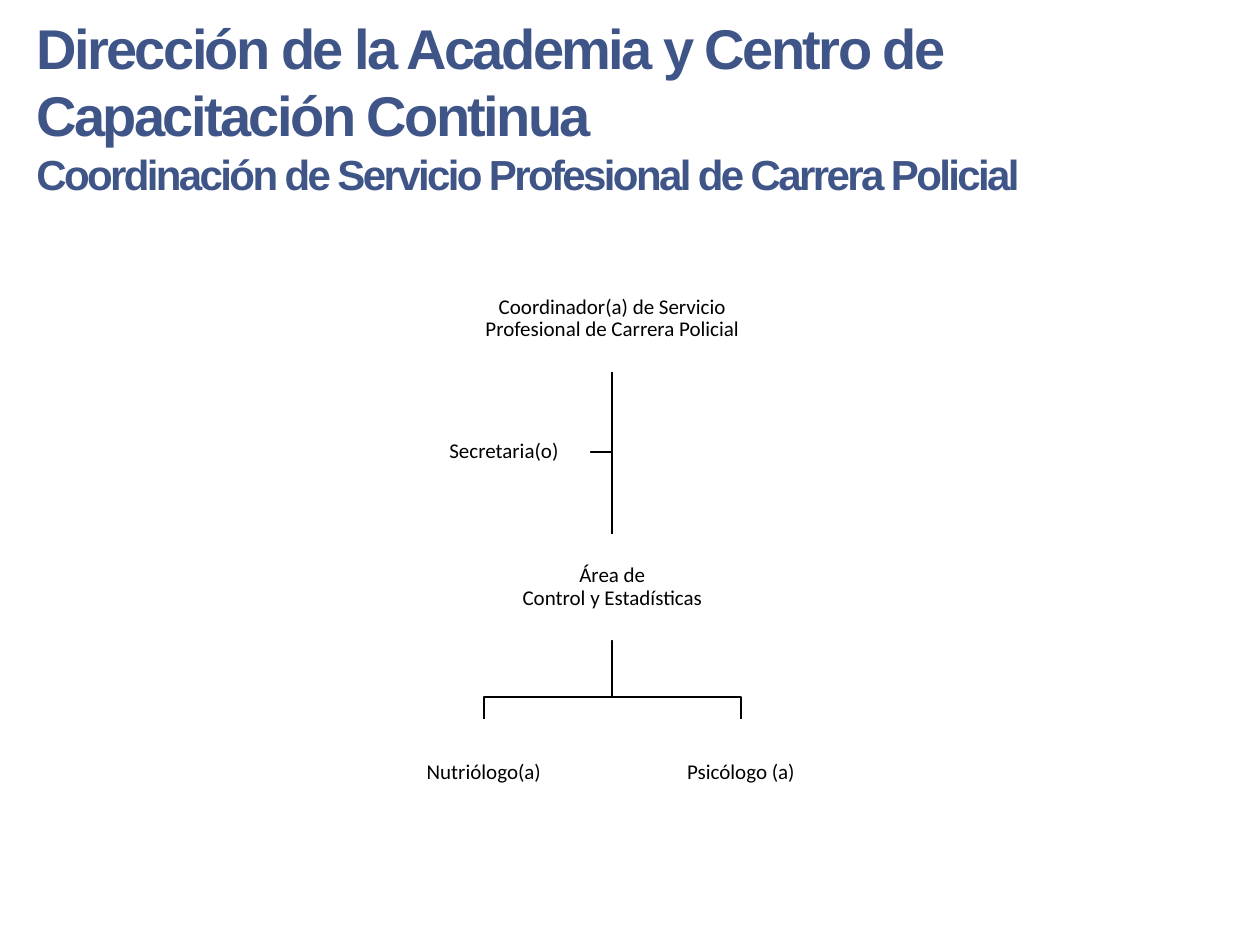
from dataclasses import dataclass

from lxml import etree
from pptx import Presentation
from pptx import util as u
from pptx.dml.color import RGBColor
from pptx.enum import shapes, text
from pptx.oxml import ns

TITLE_COLOUR = "3F5588"
BLACK = "000000"
WHITE = "FFFFFF"
BOX_HEIGHT = 0.84
CENTRE = 4.86
BRANCH_OFFSET = 1.02
BRANCH_Y = 5.53


@dataclass
class Position:
    label: str
    centre: float
    top: float
    width: float = 1.69
    height: float = BOX_HEIGHT

    @property
    def right(self) -> float:
        return self.centre + self.width / 2

    @property
    def middle(self) -> float:
        return self.top + self.height / 2

    @property
    def bottom(self) -> float:
        return self.top + self.height


def colour(value: str) -> RGBColor:
    return RGBColor.from_string(value)


def style_line(line) -> None:
    line.color.rgb = colour(BLACK)
    line.width = u.Pt(1)


def add_title(slide, lines: list[tuple[str, int]]) -> None:
    shape = slide.shapes.add_textbox(
        u.Inches(0.19), u.Inches(0.06), u.Inches(8.05), u.Inches(1.58))
    frame = shape.text_frame
    frame.word_wrap = True
    frame.text = "\n".join(line for line, _ in lines)
    for paragraph, (_, size) in zip(frame.paragraphs, lines):
        for run in paragraph.runs:
            run.font.name = "Arial"
            run.font.size = u.Pt(size)
            run.font.bold = True
            run.font.color.rgb = colour(TITLE_COLOUR)
            run.font._element.set("spc", "-150")


def add_position(slide, position: Position):
    shape = slide.shapes.add_shape(
        shapes.MSO_SHAPE.RECTANGLE,
        u.Inches(position.centre - position.width / 2), u.Inches(position.top),
        u.Inches(position.width), u.Inches(position.height))
    shape.shadow.inherit = False
    shape.fill.solid()
    shape.fill.fore_color.rgb = colour(WHITE)
    shape.line.fill.background()

    frame = shape.text_frame
    frame.word_wrap = True
    frame.vertical_anchor = text.MSO_ANCHOR.MIDDLE
    frame.margin_left = frame.margin_right = u.Inches(0.01)
    frame.margin_top = frame.margin_bottom = u.Inches(0.01)
    frame.text = position.label
    for paragraph in frame.paragraphs:
        paragraph.alignment = text.PP_ALIGN.CENTER
        paragraph.line_spacing = 0.9
        for run in paragraph.runs:
            run.font.name = "Calibri"
            run.font.size = u.Pt(12)
            run.font.color.rgb = colour(BLACK)
    return shape


def add_trunk(slide, upper, lower) -> None:
    """Join the bottom of one box to the top of the next."""
    connector = slide.shapes.add_connector(shapes.MSO_CONNECTOR.STRAIGHT, 0, 0, 0, 0)
    connector.begin_connect(upper, 2)
    connector.end_connect(lower, 0)
    style_line(connector.line)
    etree.SubElement(connector._element.spPr, ns.qn("a:effectLst"))


def add_elbow(slide, points: list[tuple[float, float]]) -> None:
    start, *others = [(u.Inches(x), u.Inches(y)) for x, y in points]
    builder = slide.shapes.build_freeform(*start)
    builder.add_line_segments(others, close=False)
    shape = builder.convert_to_shape()
    shape.shadow.inherit = False
    shape.fill.background()
    style_line(shape.line)


def main() -> None:
    presentation = Presentation()
    presentation.slide_width = u.Inches(10)
    presentation.slide_height = u.Inches(7.5)
    slide = presentation.slides.add_slide(presentation.slide_layouts[6])

    add_title(slide, [
        ("Dirección de la Academia y Centro de Capacitación Continua", 32),
        ("Coordinación de Servicio Profesional de Carrera Policial", 24),
    ])

    coordinator = Position("Coordinador(a) de Servicio Profesional de Carrera Policial",
                           CENTRE, 2.11, width=2.34)
    area = Position("Área de\nControl y Estadísticas", CENTRE, 4.24)
    secretary = Position("Secretaria(o)", 4, 3.29, width=1.37, height=0.59)
    specialists = [
        Position("Nutriólogo(a)", CENTRE - BRANCH_OFFSET, 5.71),
        Position("Psicólogo (a)", CENTRE + BRANCH_OFFSET, 5.71),
    ]

    add_elbow(slide, [(CENTRE, coordinator.bottom), (CENTRE, secretary.middle),
                      (secretary.right, secretary.middle)])
    for specialist in specialists:
        add_elbow(slide, [(CENTRE, area.bottom), (CENTRE, BRANCH_Y),
                          (specialist.centre, BRANCH_Y),
                          (specialist.centre, specialist.top)])

    add_trunk(slide, add_position(slide, coordinator), add_position(slide, area))
    for position in [*specialists, secretary]:
        add_position(slide, position)

    presentation.save("out.pptx")


if __name__ == "__main__":
    main()
